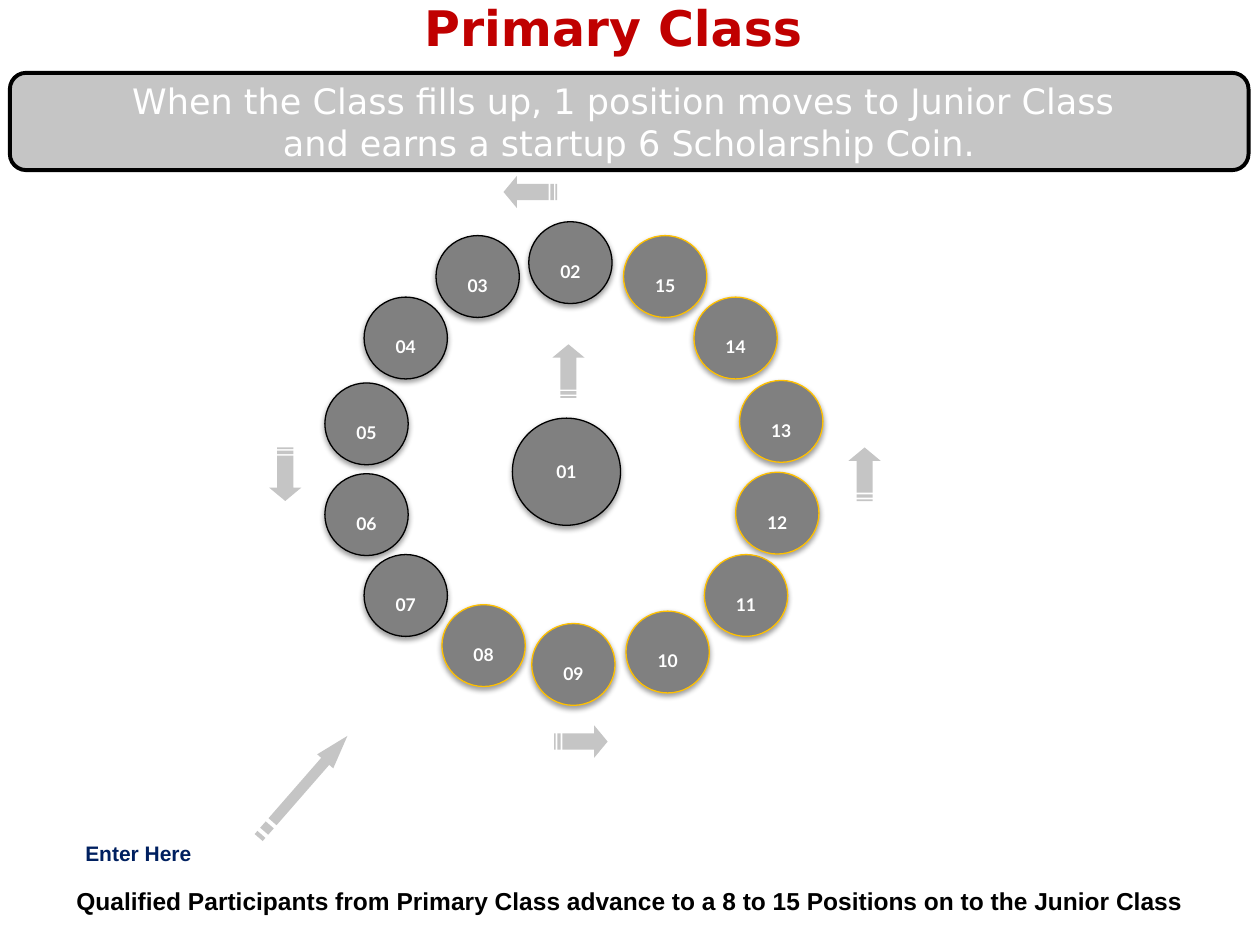
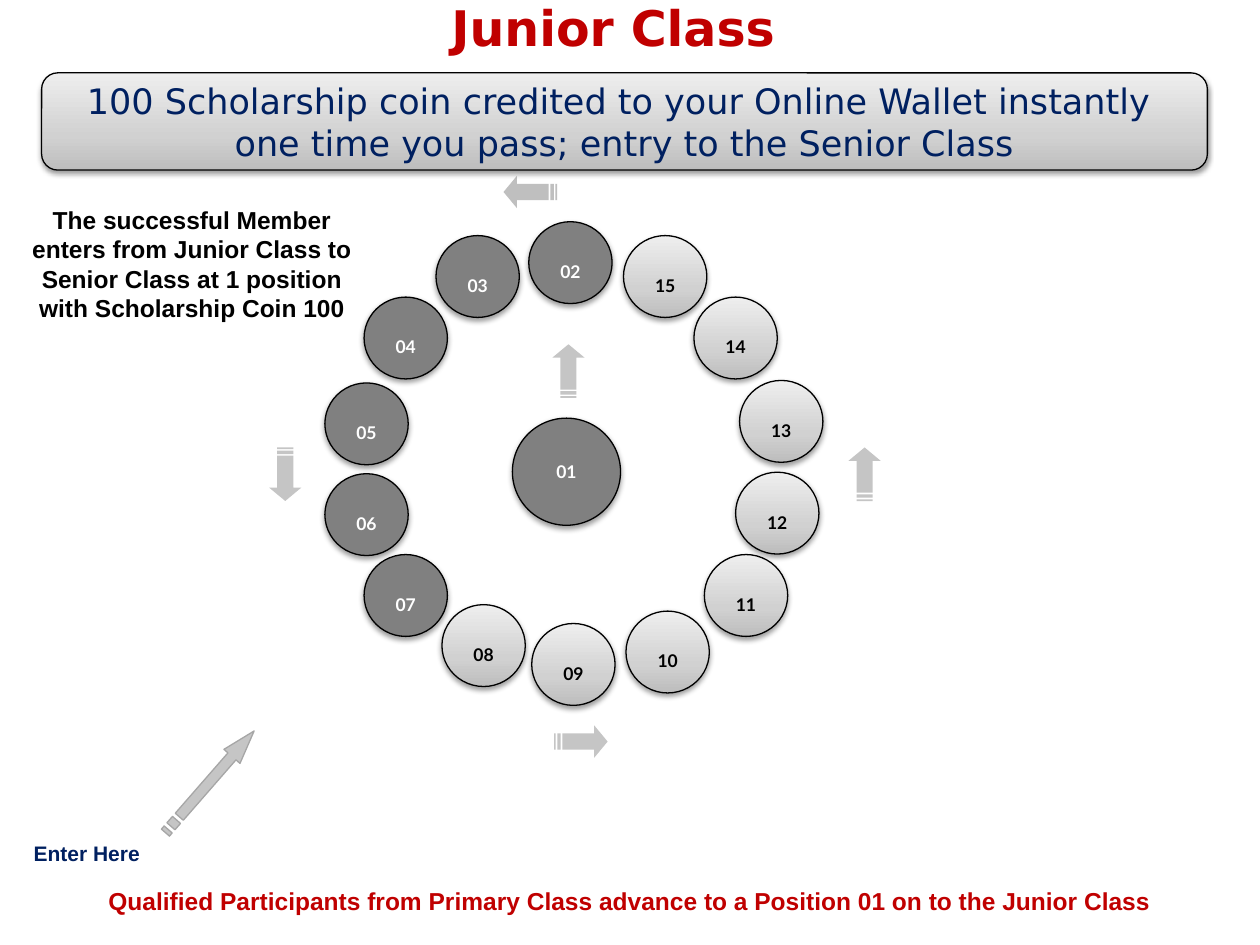
from lxml import etree
from pptx import Presentation
from pptx.dml.color import RGBColor
from pptx.enum.shapes import MSO_SHAPE as Preset
from pptx.enum.text import MSO_ANCHOR as Anchor, PP_ALIGN as Align
from pptx.oxml import parse_xml
from pptx.oxml.ns import nsdecls, qn
from pptx.util import Cm, Pt

BLACK, WHITE, RED, NAVY = "000000", "FFFFFF", "C00000", "002060"
GRAY, SILVER, GOLD = "808080", "C5C5C5", "FFC000"
GRADIENT = ((0, "BDBDBD"), (35, "D1D1D1"), (100, "EEEEEE"))

RING_LEFT, RING_TOP = 6.55, 4.47
BALL_SIZE = (1.68, 1.65)
CENTER_BALL = (3.78, 3.96, 2.18, 2.16)
BALL_OFFSETS = {
    2: (4.11, 0), 3: (2.24, 0.28), 4: (0.79, 1.52), 5: (0, 3.25),
    6: (0, 5.08), 7: (0.79, 6.71), 8: (2.36, 7.72), 9: (4.17, 8.1),
    10: (6.07, 7.85), 11: (7.65, 6.71), 12: (8.28, 5.05),
    13: (8.36, 3.2), 14: (7.44, 1.52), 15: (6.02, 0.28),
}
LAST_FILLED = 7
TOP_ARROW = (4.14, -0.6, 180)
FLOW_ARROWS = ((-0.8, 5.09, 90), (5.16, 10.48, 0), (4.91, 3.01, 270), (10.88, 5.09, 270))
FLOW_ARROW_SIZE = (1.08, 0.65)
ENTRY_ARROW_SIZE = (2.72, 0.43)

ARROW_OUTLINES = (
    ((0, 1), (1, 1), (1, 3), (0, 3)),
    ((2, 1), (4, 1), (4, 3), (2, 3)),
    ((5, 1), (24, 1), (24, 0), (32, 2), (24, 4), (24, 3), (5, 3)),
)


def color(value):
    return RGBColor.from_string(value)


def write(frame, lines, font, size, ink, bold=False, align=Align.CENTER):
    for index, line in enumerate(lines):
        paragraph = frame.paragraphs[0] if index == 0 else frame.add_paragraph()
        paragraph.text = line
        paragraph.alignment = align
        paragraph.font.name = font
        paragraph.font.size = Pt(size)
        paragraph.font.bold = bold
        paragraph.font.color.rgb = color(ink)


def add_label(slide, box, text, size, ink, font="Arial", align=Align.CENTER, anchor=Anchor.TOP):
    frame = slide.shapes.add_textbox(*map(Cm, box)).text_frame
    frame.word_wrap = True
    frame.vertical_anchor = anchor
    write(frame, [text], font, size, ink, True, align)


def paint(shape, fill, line=None, line_width=0.75, shadow=False):
    properties = shape.element.spPr
    if fill is GRADIENT:
        stops = "".join(
            f'<a:gs pos="{position * 1000}"><a:srgbClr val="{value}"/></a:gs>'
            for position, value in fill
        )
        properties.insert(2, parse_xml(
            f'<a:gradFill {nsdecls("a")} rotWithShape="1"><a:gsLst>{stops}</a:gsLst>'
            '<a:lin ang="16200000" scaled="0"/></a:gradFill>'
        ))
    else:
        shape.fill.solid()
        shape.fill.fore_color.rgb = color(fill)
    if line:
        shape.line.color.rgb = color(line)
        shape.line.width = Pt(line_width)
    else:
        shape.line.fill.background()
    shape.shadow.inherit = False
    if shadow:
        outer = etree.SubElement(
            properties.find(qn("a:effectLst")), qn("a:outerShdw"),
            blurRad="40000", dist="20000", dir="5400000", rotWithShape="0",
        )
        tint = etree.SubElement(outer, qn("a:srgbClr"), val=BLACK)
        etree.SubElement(tint, qn("a:alpha"), val="38000")


def add_striped_arrow(slide, center_x, center_y, size, rotation, fill=SILVER, line=None):
    width, height = size
    first, *others = ARROW_OUTLINES
    builder = slide.shapes.build_freeform(*first[0], scale=(Cm(width) / 32, Cm(height) / 4))
    builder.add_line_segments(first[1:])
    for outline in others:
        builder.move_to(*outline[0])
        builder.add_line_segments(outline[1:])
    arrow = builder.convert_to_shape(Cm(center_x - width / 2), Cm(center_y - height / 2))
    arrow.rotation = rotation
    paint(arrow, fill, line)


def add_ball(slide, box, number, fill, line, ink, drop=0):
    ball = slide.shapes.add_shape(Preset.OVAL, *map(Cm, box))
    paint(ball, fill, line, shadow=True)
    frame = ball.text_frame
    frame.word_wrap = False
    frame.vertical_anchor = Anchor.MIDDLE
    frame.margin_left = frame.margin_right = frame.margin_bottom = 0
    frame.margin_top = Cm(drop)
    write(frame, [f"{number:02}"], "Lato", 10, ink, True)


def add_ring(slide, left, top, open_style, top_arrow_fill):
    filled_style = (GRAY, BLACK, WHITE)
    for number, (x, y) in BALL_OFFSETS.items():
        style = filled_style if number <= LAST_FILLED else open_style
        add_ball(slide, (left + x, top + y, *BALL_SIZE), number, *style, drop=0.36)
    x, y, width, height = CENTER_BALL
    add_ball(slide, (left + x, top + y, width, height), 1, *filled_style)
    for x, y, rotation in FLOW_ARROWS:
        add_striped_arrow(slide, left + x, top + y, FLOW_ARROW_SIZE, rotation)
    x, y, rotation = TOP_ARROW
    add_striped_arrow(slide, left + x, top + y, FLOW_ARROW_SIZE, rotation, top_arrow_fill)


def add_banner(slide, left, width, lines, ink, **style):
    banner = slide.shapes.add_shape(
        Preset.FLOWCHART_ALTERNATE_PROCESS, Cm(left), Cm(1.47), Cm(width), Cm(1.96)
    )
    paint(banner, line=BLACK, **style)
    frame = banner.text_frame
    frame.word_wrap = False
    frame.vertical_anchor = Anchor.MIDDLE
    write(frame, lines, "DejaVu Sans", 20, ink)


def add_entry(slide, label_left, arrow_x, arrow_y, line=None):
    add_label(slide, (label_left, 16.81, 2.74, 0.76), "Enter Here", 12, NAVY, align=Align.LEFT)
    add_striped_arrow(slide, arrow_x, arrow_y, ENTRY_ARROW_SIZE, 311.1, line=line)


def add_class_slide(presentation, title, footer, footer_ink, open_style, top_arrow_fill=SILVER):
    slide = presentation.slides.add_slide(presentation.slide_layouts[6])
    add_label(slide, (0, -0.18, 24.72, 1.45), title, 28, RED, "DejaVu Sans", anchor=Anchor.MIDDLE)
    add_ring(slide, RING_LEFT, RING_TOP, open_style, top_arrow_fill)
    add_label(slide, (0, 17.73, 25.4, 0.84), footer, 14, footer_ink)
    return slide


def add_primary_class(presentation):
    slide = add_class_slide(
        presentation, "Primary Class",
        "Qualified Participants from Primary Class advance to a 8 to 15 Positions on to the Junior Class",
        BLACK, (GRAY, GOLD, WHITE),
    )
    add_banner(
        slide, 0.2, 24.97,
        ["When the Class fills up, 1 position moves to Junior Class ",
         "and earns a startup 6 Scholarship Coin."],
        WHITE, fill=SILVER, line_width=2.25,
    )
    add_entry(slide, 1.47, 6.11, 15.86)


def add_junior_class(presentation):
    slide = add_class_slide(
        presentation, "Junior Class",
        "Qualified Participants from Primary Class advance to a Position 01 on to the Junior Class",
        RED, (GRADIENT, BLACK, BLACK), "BFBFBF",
    )
    add_banner(
        slide, 0.84, 23.5,
        ["100 Scholarship coin credited to your Online Wallet instantly ",
         "one time you pass; entry to the Senior Class"],
        NAVY, fill=GRADIENT, shadow=True,
    )
    add_entry(slide, 0.43, 4.23, 15.76, "A6A6A6")
    add_label(
        slide, (0.2, 4.01, 7.34, 2.64),
        "The successful Member enters from Junior Class to Senior Class"
        " at 1 position with Scholarship Coin 100",
        14, BLACK,
    )


def main():
    presentation = Presentation()
    presentation.slide_width, presentation.slide_height = Cm(25.4), Cm(19.05)
    add_primary_class(presentation)
    add_junior_class(presentation)
    presentation.save("out.pptx")


if __name__ == "__main__":
    main()
